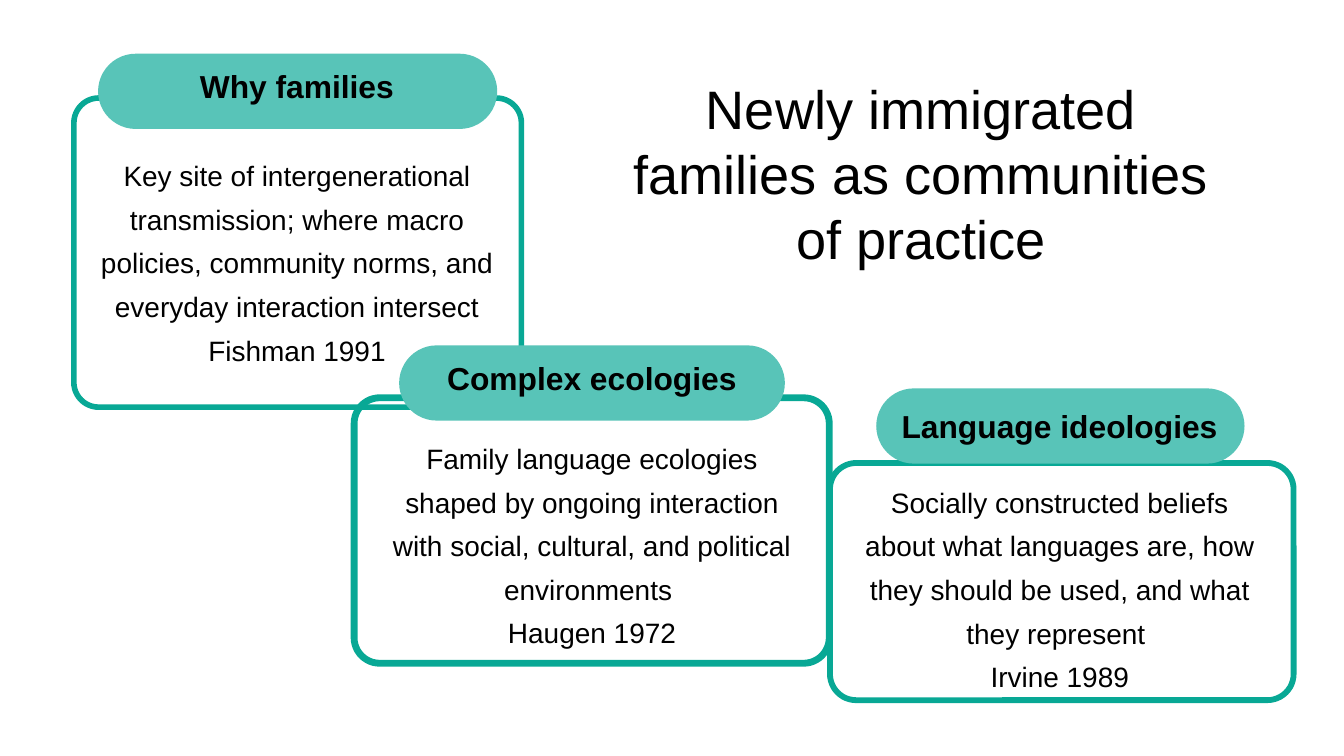
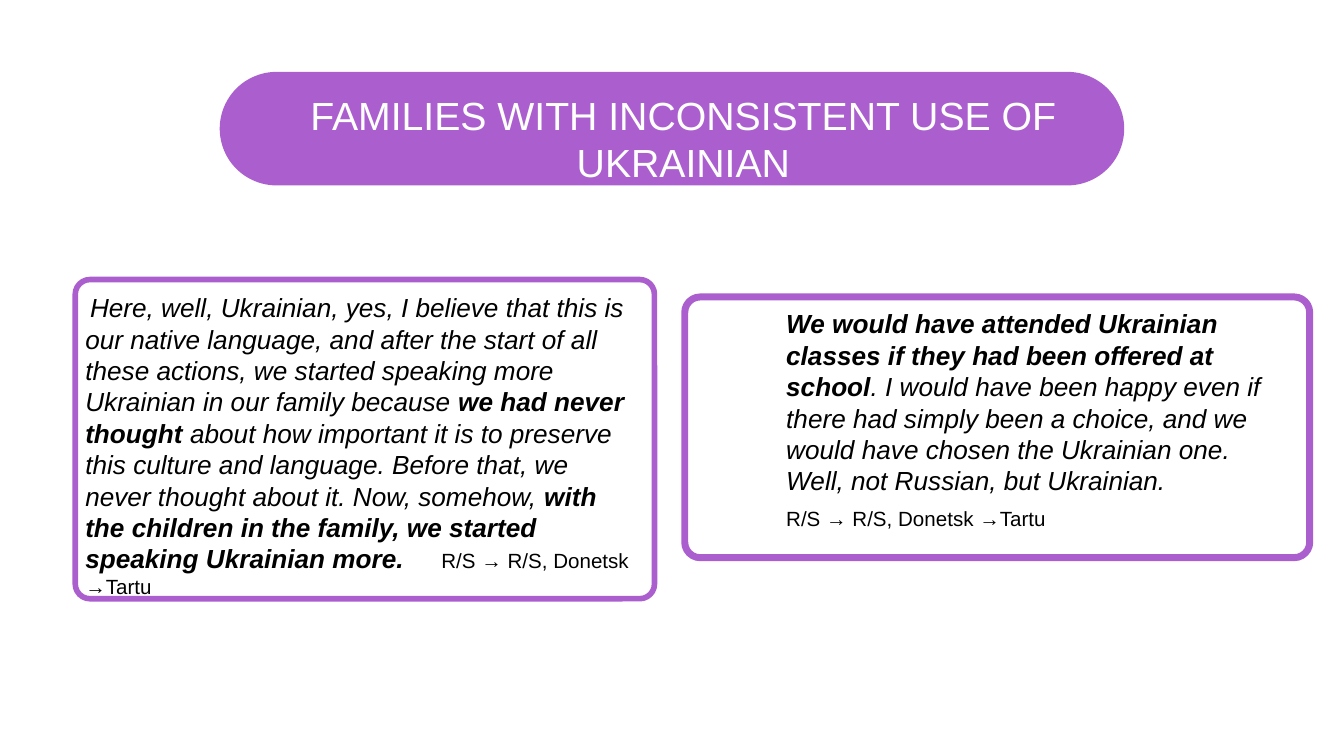
import pptx
import pptx.dml.color
import pptx.enum.shapes
import pptx.enum.text
import pptx.util

PX = 4572
COLORS = {
    "ink": "000000",
    "paper": "FFFFFF",
    "teal": "08A895",
    "mint": "58C4B8",
    "purple": "AB5FCF",
}


class Deck:
    """Holds the deck style and draws on the current slide."""

    font = "Arial"

    def __init__(self, width, height):
        self.presentation = pptx.Presentation()
        self.presentation.slide_width = width * PX
        self.presentation.slide_height = height * PX
        self.slide = None

    def new_slide(self):
        self.slide = self.presentation.slides.add_slide(self.presentation.slide_layouts[6])

    def color(self, name):
        return pptx.dml.color.RGBColor.from_string(COLORS[name])

    def rounded(self, box, radius):
        shape = self.slide.shapes.add_shape(
            pptx.enum.shapes.MSO_SHAPE.ROUNDED_RECTANGLE, *(side * PX for side in box)
        )
        shape.adjustments[0] = radius / min(box[2:])
        shape.shadow.inherit = False
        return shape

    def frame(self, box, radius, color, weight):
        shape = self.rounded(box, radius)
        shape.fill.background()
        shape.line.color.rgb = self.color(color)
        shape.line.width = pptx.util.Pt(weight)

    def pill(self, box, color):
        shape = self.rounded(box, box[3] / 2)
        shape.fill.solid()
        shape.fill.fore_color.rgb = self.color(color)
        shape.line.fill.background()

    def text_box(self, box):
        text_frame = self.slide.shapes.add_textbox(*(side * PX for side in box)).text_frame
        text_frame.word_wrap = True
        text_frame.margin_left = text_frame.margin_right = 0
        text_frame.margin_top = text_frame.margin_bottom = 0
        return text_frame

    def style(self, paragraph, size=None, color="ink", bold=None, italic=None):
        font = paragraph.font
        font.name = self.font
        font.color.rgb = self.color(color)
        font.bold = bold
        font.italic = italic
        if size:
            font.size = pptx.util.Pt(size)

    def centered(self, box, lines, size, color="ink", bold=False, spacing=None):
        text_frame = self.text_box(box)
        for index, line in enumerate(lines):
            paragraph = text_frame.add_paragraph() if index else text_frame.paragraphs[0]
            paragraph.text = line
            paragraph.alignment = pptx.enum.text.PP_ALIGN.CENTER
            paragraph.line_spacing = spacing
            self.style(paragraph, size, color, bold)

    def indent(self, paragraph, margin=0, first=0):
        properties = paragraph._p.get_or_add_pPr()
        properties.set("marL", str(margin * PX))
        properties.set("indent", str(first * PX))

    def add_runs(self, paragraph, parts, size=None, italic=None):
        for text, bold in parts:
            run = paragraph.add_run()
            run.text = text
            run.font.bold = bold
            run.font.italic = italic
            if size:
                run.font.size = pptx.util.Pt(size)

    def add_gap(self, paragraph, size, tracking):
        self.add_runs(paragraph, [(" ", True)], size)
        paragraph.runs[-1].font._element.set("spc", str(tracking * 100))

    def card(self, frame, radius, weight, pill, heading, title, body, lines):
        self.frame(frame, radius, "teal", weight)
        self.pill(pill, "mint")
        self.centered(heading, [title], 17, bold=True)
        self.centered(body, lines, 15, spacing=1.3)


def framework_slide(deck):
    deck.new_slide()
    deck.card(
        (110, 146, 666, 460), 37, 3, (146, 80, 594, 112), (218, 100, 448, 58),
        "Why families", (133, 221, 618, 314),
        ["Key site of intergenerational transmission; where macro policies, "
         "community norms, and everyday interaction intersect", "Fishman 1991"],
    )
    deck.card(
        (527, 592, 707, 395), 38, 3.67, (594, 514, 574, 112), (657, 534, 448, 58),
        "Complex ecologies", (572, 642, 618, 314),
        ["Family language ecologies shaped by ongoing interaction with social, "
         "cultural, and political environments ", "Haugen 1972"],
    )
    deck.card(
        (1235, 689, 690, 353), 39, 3.12, (1304, 578, 548, 112), (1329, 606, 496, 58),
        "Language ideologies", (1278, 707, 598, 314),
        ["Socially constructed beliefs about what languages are, how they should "
         "be used, and what they represent ", "Irvine 1989"],
    )
    deck.centered(
        (924, 112, 894, 292), ["Newly immigrated families as communities of practice"], 29
    )


def quotes_slide(deck):
    journey = "R/S → R/S, Donetsk →Tartu"
    deck.new_slide()
    deck.frame((112, 416, 862, 475), 22, "purple", 3)
    deck.frame((1019, 442, 930, 388), 23, "purple", 3.75)

    native_language = deck.text_box((127, 434, 826, 476)).paragraphs[0]
    deck.indent(native_language, first=7)
    deck.style(native_language)
    deck.add_runs(native_language, [
        ("Here, well, Ukrainian, yes, I believe that this is our native language, and "
         "after the start of all these actions, we started speaking more Ukrainian in "
         "our family because ", False),
        ("we had never thought", True),
        (" about how important it is to preserve this culture and language. Before "
         "that, we never thought about it. Now, somehow, ", False),
        ("with the children in the family, we started speaking Ukrainian more.", True),
    ], 14, True)
    deck.add_gap(native_language, 14, 16)
    deck.add_runs(native_language, [(journey, False)], 11, False)

    school_quote = deck.text_box((1070, 458, 826, 334))
    classes = school_quote.paragraphs[0]
    deck.indent(classes, margin=100)
    deck.style(classes, 14, italic=True)
    deck.add_runs(classes, [
        ("We would have attended Ukrainian classes if they had been offered at school", True),
        (". I would have been happy even if there had simply been a choice, and we would "
         "have chosen the Ukrainian one. Well, not Russian, but Ukrainian.", False),
    ])
    origin = school_quote.add_paragraph()
    origin.text = journey
    origin.line_spacing = 1.4
    deck.indent(origin, margin=100)
    deck.style(origin, 11)

    deck.pill((327, 107, 1346, 169), "purple")
    deck.centered(
        (336, 136, 1362, 142), ["FAMILIES WITH INCONSISTENT USE OF UKRAINIAN"], 21, "paper"
    )


def main():
    deck = Deck(2000, 1125)
    framework_slide(deck)
    quotes_slide(deck)
    deck.presentation.save("out.pptx")


if __name__ == "__main__":
    main()
